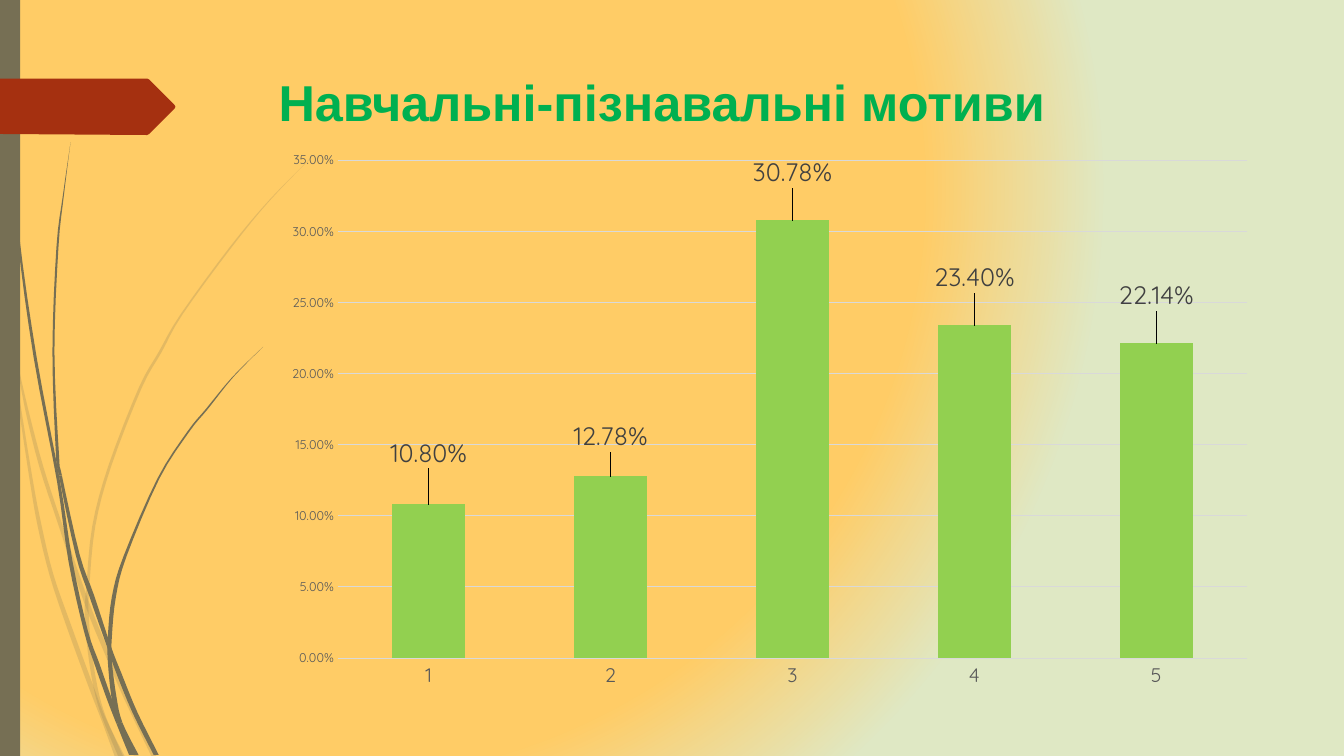
from dataclasses import dataclass
from lxml import etree
from pptx import Presentation
from pptx.chart.data import CategoryChartData
from pptx.dml.color import RGBColor
from pptx.enum.chart import XL_CHART_TYPE, XL_LABEL_POSITION, XL_TICK_MARK
from pptx.enum.shapes import MSO_SHAPE
from pptx.enum.text import MSO_ANCHOR, PP_ALIGN
from pptx.oxml import parse_xml
from pptx.oxml.ns import nsdecls, qn
from pptx.util import Inches, Pt


@dataclass(frozen=True)
class Theme:
    glow: str = "FFCC66"
    edge: str = "DFE8C4"
    stem: str = "766F54"
    tag: str = "A53010"
    title: str = "00B050"
    bar: str = "92D050"
    grid: str = "D9D9D9"
    axis: str = "595959"
    label: str = "404040"
    title_font: str = "Arial"
    chart_font: str = "Quicksand"
    title_size: int = 36
    label_size: int = 18
    category_size: int = 14
    value_size: int = 9


@dataclass(frozen=True)
class Box:
    left: float
    top: float
    width: float
    height: float

    def emu(self):
        return [Inches(n) for n in (self.left, self.top, self.width, self.height)]


THEME = Theme()
SLIDE = Box(0, 0, 13.33, 7.5)

# Each strand: the spine points where it is jointed, then the spine as
# (x, y, thickness) in inches
FAINT_STRANDS = [
    ([1, 7], [(0, 2.9, .03), (.11, 3.5, .02), (.3, 4.7, .03), (.39, 5.2, .04),
              (.51, 5.7, .04), (.68, 6.2, .05), (.91, 6.83, .05), (1.03, 7.14, .05),
              (1.19, 7.51, .1)]),
    ([4], [(.14, 3.45, 0), (.26, 4.04, .03), (.41, 4.63, .04), (.6, 5.21, .04),
           (.86, 5.98, .05), (1.07, 6.5, .05), (1.25, 6.92, .05), (1.53, 7.51, .05)]),
    ([8, 9, 12], [(3.12, 1.53, 0), (2.68, 1.98, .01), (2.29, 2.45, .02), (1.8, 3.12, .02),
                  (1.59, 3.49, .03), (1.39, 3.85, .03), (1.09, 4.62, .03), (.93, 5.22, .03),
                  (.87, 5.84, .03), (.86, 6.1, .04), (.89, 6.46, .04), (.95, 6.83, .04),
                  (1.03, 7.11, .04), (1.2, 7.51, .05)]),
]
DARK_STRANDS = [
    ([5, 10], [(.04, 0, .01), (.05, .48, .01), (.08, 1.1, .01), (.18, 2.33, .02),
               (.35, 3.55, .03), (.58, 4.77, .03), (.7, 5.57, .04), (.85, 6.25, .04),
               (.96, 6.58, .05), (1.08, 6.92, .05), (1.18, 7.18, .05), (1.32, 7.49, .08)]),
    ([5, 8], [(.7, 1.41, 0), (.63, 1.93, .01), (.57, 2.45, .02), (.53, 3.49, .02),
              (.57, 4.51, .03), (.6, 4.72, .03), (.77, 5.5, .04), (.91, 5.91, .05),
              (1.08, 6.41, .04), (1.18, 6.68, .05), (1.34, 7.07, .05), (1.55, 7.49, .05)]),
    ([7, 10], [(2.61, 3.44, 0), (2.31, 3.74, .01), (2.05, 4.06, .02), (1.87, 4.28, .02),
               (1.57, 4.75, .02), (1.24, 5.52, .03), (1.13, 5.92, .04), (1.09, 6.32, .04),
               (1.09, 6.56, .04), (1.13, 6.91, .05), (1.19, 7.17, .05), (1.35, 7.49, .05)]),
]
SMOOTH_STEPS = 4


def paint(shape, color, alpha=None):
    shape.shadow.inherit = False
    shape.line.fill.background()
    shape.fill.solid()
    shape.fill.fore_color.rgb = RGBColor.from_string(color)
    if alpha:
        tint = shape.fill._xPr.find(qn("a:solidFill"))[0]
        etree.SubElement(tint, qn("a:alpha"), val=str(alpha * 1000))


def outline(page, box, points, color, alpha=None):
    corners = [(Inches(box.left + x), Inches(box.top + y)) for x, y in points]
    builder = page.shapes.build_freeform(*corners[0])
    builder.add_line_segments(corners[1:], close=True)
    paint(builder.convert_to_shape(), color, alpha)


def smooth_spine(spine):
    """Catmull-Rom interpolation through the spine."""
    ends = [spine[0], *spine, spine[-1]]
    result = []
    for a, b, c, d in zip(ends, ends[1:], ends[2:], ends[3:]):
        for step in range(SMOOTH_STEPS):
            t = step / SMOOTH_STEPS
            result.append([
                (2 * q + (r - p) * t + (2 * p - 5 * q + 4 * r - s) * t ** 2
                 + (3 * q - p - 3 * r + s) * t ** 3) / 2
                for p, q, r, s in zip(a, b, c, d)])
    return result + [spine[-1]]


def add_strand(page, box, joints, spine, alpha):
    curve = smooth_spine(spine)
    cuts = [0, *(joint * SMOOTH_STEPS for joint in joints), len(curve) - 1]
    for start, end in zip(cuts, cuts[1:]):
        piece = curve[start:end + 1]
        right = [(x + w / 2, y) for x, y, w in piece]
        left = [(x - w / 2, y) for x, y, w in reversed(piece)]
        outline(page, box, right + left, THEME.stem, alpha)


def add_background(page):
    page.background.fill.gradient()
    gradient = page.background._cSld.find(".//" + qn("a:gradFill"))
    stops = "".join(f'<a:gs pos="{share * 1000}"><a:srgbClr val="{color}"/></a:gs>'
                    for share, color in ((76, THEME.glow), (100, THEME.edge)))
    gradient.getparent().replace(gradient, parse_xml(
        f'<a:gradFill {nsdecls("a")} rotWithShape="1"><a:gsLst>{stops}</a:gsLst>'
        '<a:path path="circle"><a:fillToRect l="50000" t="50000" r="100000" b="100000"/>'
        '</a:path></a:gradFill>'))


def add_side_decor(page, box):
    # Curved grass strands
    for strands, alpha in ((FAINT_STRANDS, 20), (DARK_STRANDS, None)):
        for joints, spine in strands:
            add_strand(page, box, joints, spine, alpha)
    # Edge band and arrow tag
    band = Box(box.left, box.top, .2, box.height)
    paint(page.shapes.add_shape(MSO_SHAPE.RECTANGLE, *band.emu()), THEME.stem)
    tag = [(0, .78), (1.46, .78), (1.48, .79), (1.73, 1.04), (1.74, 1.06),
           (1.73, 1.08), (1.48, 1.33), (1.46, 1.34), (0, 1.33)]
    outline(page, box, tag, THEME.tag)


def style(font, size, color, name):
    font.size, font.name = Pt(size), name
    font.color.rgb = RGBColor.from_string(color)


def add_title(page, box, text):
    frame = page.shapes.add_textbox(*box.emu()).text_frame
    frame.word_wrap = True
    frame.vertical_anchor = MSO_ANCHOR.TOP
    frame.margin_top = Inches(.05)
    para = frame.paragraphs[0]
    para.alignment = PP_ALIGN.CENTER
    span = para.add_run()
    span.text = text
    style(span.font, THEME.title_size, THEME.title, THEME.title_font)
    span.font.bold = True


def manual_layout(inner=False, **shares):
    target = '<c:layoutTarget val="inner"/><c:xMode val="edge"/><c:yMode val="edge"/>'
    values = "".join(f'<c:{key} val="{value}"/>' for key, value in shares.items())
    return parse_xml(f'<c:layout {nsdecls("c")}><c:manualLayout>{target if inner else ""}'
                     f'{values}</c:manualLayout></c:layout>')


def add_motive_chart(page, box, values, label_lifts):
    data = CategoryChartData(number_format="0.00%")
    data.categories = [str(n + 1) for n in range(len(values))]
    data.add_series("Series 1", values)
    chart = page.shapes.add_chart(XL_CHART_TYPE.COLUMN_CLUSTERED, *box.emu(), data).chart
    chart.has_legend = chart.has_title = False
    style(chart.font, 10, "000000", THEME.chart_font)

    # Plot area
    area = chart._chartSpace.chart.plotArea
    for old in area.findall(qn("c:layout")):
        area.remove(old)
    area.insert(0, manual_layout(True, x=.65 / box.width, y=.19 / box.height,
                                 w=9.02 / box.width, h=4.94 / box.height))

    # Axes
    for axis, size in ((chart.category_axis, THEME.category_size),
                       (chart.value_axis, THEME.value_size)):
        axis.major_tick_mark = axis.minor_tick_mark = XL_TICK_MARK.NONE
        axis.format.line.fill.background()
        style(axis.tick_labels.font, size, THEME.axis, THEME.chart_font)
    scale = chart.value_axis
    scale.minimum_scale, scale.maximum_scale, scale.major_unit = 0, .35, .05
    scale.tick_labels.number_format = "0.00%"
    scale.tick_labels.number_format_is_linked = False
    grid = scale.major_gridlines.format.line
    grid.width = Pt(.75)
    grid.color.rgb = RGBColor.from_string(THEME.grid)

    # Bars and their raised labels, without leader lines
    plot = chart.plots[0]
    plot.gap_width, plot.vary_by_categories = 150, False
    series = plot.series[0]
    series.format.fill.solid()
    series.format.fill.fore_color.rgb = RGBColor.from_string(THEME.bar)
    labels = series.data_labels
    labels.show_value = True
    labels.number_format, labels.number_format_is_linked = "0.00%", False
    labels.position = XL_LABEL_POSITION.OUTSIDE_END
    style(labels.font, THEME.label_size, THEME.label, THEME.chart_font)
    for index, lift in enumerate(label_lifts):
        label = series.points[index].data_label
        label.position = XL_LABEL_POSITION.OUTSIDE_END
        style(label.font, THEME.label_size, THEME.label, THEME.chart_font)
        entry = labels._element.findall(qn("c:dLbl"))[index]
        entry.insert(1, manual_layout(x=0, y=-lift / box.height))
    labels._element.append(parse_xml(
        f'<c:extLst {nsdecls("c")}><c:ext uri="{{CE6537A1-D6FC-4f65-9D91-7224C49458BB}}" '
        'xmlns:c15="http://schemas.microsoft.com/office/drawing/2012/chart">'
        '<c15:showLeaderLines val="0"/></c:ext></c:extLst>'))


def main():
    deck = Presentation()
    deck.slide_width, deck.slide_height = Inches(SLIDE.width), Inches(SLIDE.height)
    page = deck.slides.add_slide(deck.slide_layouts[6])
    add_background(page)
    add_side_decor(page, SLIDE)
    add_title(page, Box(.56, .66, 12.01, .88), "Навчальні-пізнавальні мотиви")
    add_motive_chart(page, Box(2.7, 1.4, 9.87, 5.53),
                     [.108, .1278, .3078, .234, .2214], [.32, .2, .28, .28, .28])
    deck.save("out.pptx")


if __name__ == "__main__":
    main()
